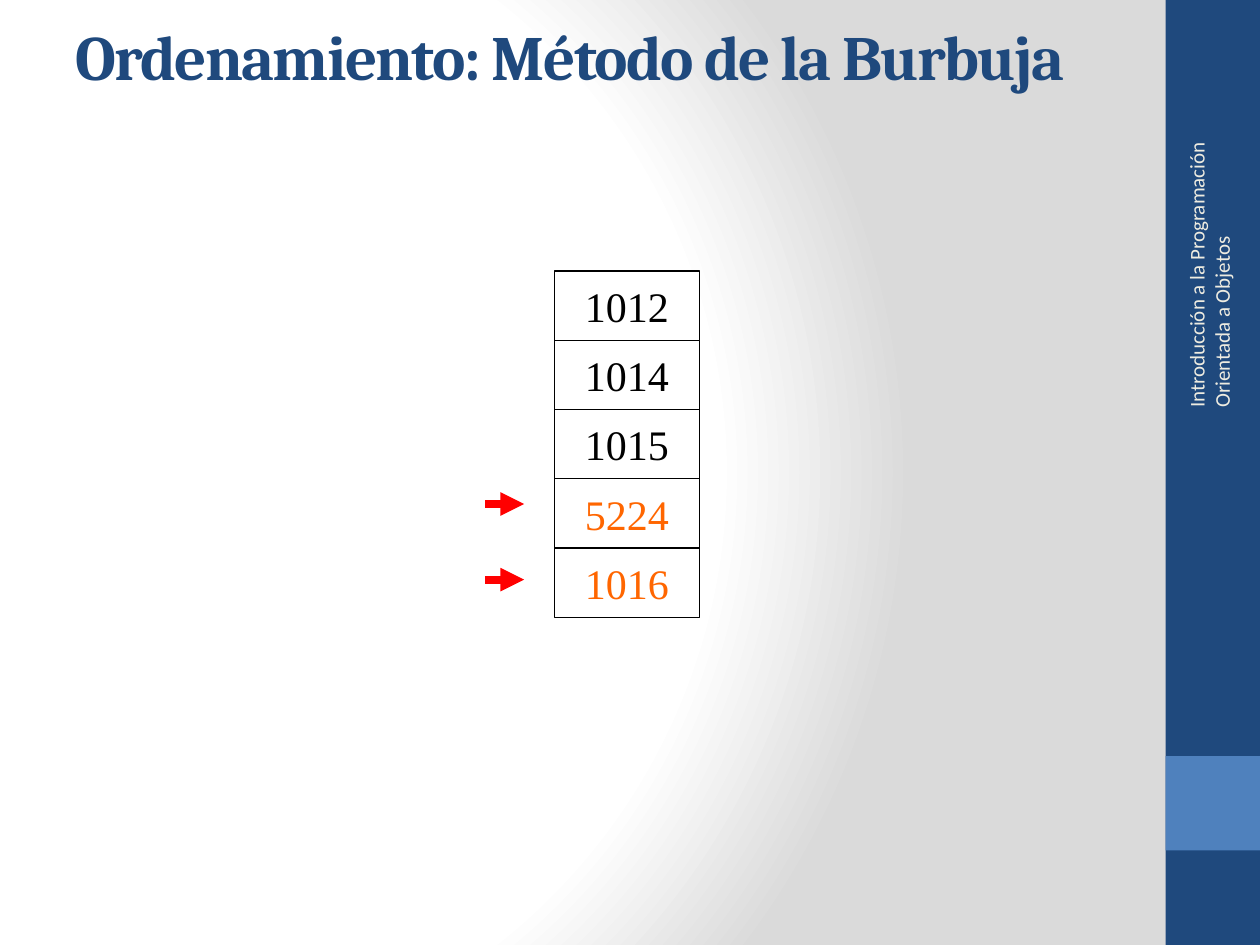
from dataclasses import dataclass
from pptx import Presentation
from pptx.dml.color import RGBColor
from pptx.enum.shapes import MSO_CONNECTOR, MSO_SHAPE
from pptx.enum.text import MSO_ANCHOR, MSO_AUTO_SIZE, PP_ALIGN
from pptx.oxml import parse_xml
from pptx.oxml.ns import nsdecls
from pptx.util import Pt

SCALE = 9144


@dataclass(frozen=True)
class Theme:
    """Colours, fonts and type sizes of the slide."""
    navy: str = "1F497D"
    blue: str = "4F81BD"
    cream: str = "EEECE1"
    white: str = "FFFFFF"
    gray: str = "DADADA"
    black: str = "000000"
    hot: str = "FF6600"
    red: str = "FF0000"
    head: tuple = ("Cambria", 36)
    side: tuple = ("Calibri", 12)
    cell: tuple = ("Times New Roman", 24)


THEME = Theme()


def emu(*vals):
    """Turn px into EMU."""
    return [round(val * SCALE) for val in vals]


def assign(obj, vals):
    """Set each attribute of obj from a dict."""
    for key, val in vals.items():
        setattr(obj, key, val)


def write(shape, text, face, tint, align=PP_ALIGN.LEFT, bold=False, **frame):
    """Put one styled line of text in a shape and return its run."""
    assign(shape.text_frame, {"auto_size": MSO_AUTO_SIZE.NONE,
                              "word_wrap": True, **frame})
    para = shape.text_frame.paragraphs[0]
    para.alignment = align
    run = para.add_run()
    run.text = text
    name, size = face
    assign(run.font, {"name": name, "size": Pt(size), "bold": bold})
    run.font.color.rgb = RGBColor.from_string(tint)
    return run


def block(slide, box, fill, edge=None):
    """Draw a flat rectangle."""
    shape = slide.shapes.add_shape(MSO_SHAPE.RECTANGLE, *emu(*box))
    shape.shadow.inherit = False
    shape.fill.solid()
    shape.fill.fore_color.rgb = RGBColor.from_string(fill)
    if edge:
        shape.line.color.rgb = RGBColor.from_string(edge)
        shape.line.width = Pt(0.75)
    else:
        shape.line.fill.background()
    return shape


def arrow(slide, left, top, size):
    """Draw a red arrow that points right."""
    line = slide.shapes.add_connector(
        MSO_CONNECTOR.STRAIGHT, *emu(left, top, left + size, top))
    line.line.color.rgb = RGBColor.from_string(THEME.red)
    line.line.width = Pt(4.5)
    line.line._get_or_add_ln().append(
        parse_xml(f'<a:tailEnd {nsdecls("a")} type="triangle"/>'))
    line._element.spPr.append(parse_xml(f'<a:effectLst {nsdecls("a")}/>'))


def backdrop(slide):
    """Fill the background with a round white to gray gradient."""
    slide.background.fill.solid()
    stops = "".join(
        f'<a:gs pos="{pos}000"><a:srgbClr val="{tint}"/></a:gs>'
        for pos, tint in ((0, THEME.white), (75, THEME.white), (100, THEME.gray)))
    fill = parse_xml(
        f'<a:gradFill {nsdecls("a")} rotWithShape="1"><a:gsLst>{stops}</a:gsLst>'
        '<a:path path="circle"><a:fillToRect l="20000" t="50000" r="100000"'
        ' b="50000"/></a:path></a:gradFill>')
    base = slide._element.xpath(".//p:bgPr")[0]
    base.replace(base[0], fill)


def sidebar(slide, box):
    """Draw the side band with its square and upright course name."""
    left, top, wide, high = box
    block(slide, box, THEME.navy)
    block(slide, (left, top + high - 2 * wide, wide, wide), THEME.blue)
    label = slide.shapes.add_textbox(*emu(left - 99, top + 180, 267, 40))
    label.rotation = 270
    write(label, "Introducción a la Programación Orientada a Objetos",
          THEME.side, THEME.cream, vertical_anchor=MSO_ANCHOR.MIDDLE)


def heading(slide, box, text):
    """Place and style the title."""
    title = slide.shapes.title
    assign(title, dict(zip(("left", "top", "width", "height"), emu(*box))))
    run = write(title, text, THEME.head, THEME.navy, bold=True,
                vertical_anchor=MSO_ANCHOR.TOP)
    run.font._element.set("spc", "-100")


def stack(slide, box, items, marked):
    """Stack the values and point at the marked pair."""
    left, top, wide, high = box
    step = high // len(items)
    for row, item in enumerate(items):
        cell = block(slide, (left, top + row * step, wide, step),
                     THEME.white, THEME.black)
        write(cell, item, THEME.cell, THEME.hot if row in marked else THEME.black,
              PP_ALIGN.CENTER, word_wrap=False, vertical_anchor=MSO_ANCHOR.MIDDLE)
    for turn in range(len(marked)):
        arrow(slide, left - 55, top + 185 + turn * 60, 31)


def main():
    """Build and save the slide."""
    deck = Presentation()
    deck.slide_width, deck.slide_height = emu(1000, 750)
    slide = deck.slides.add_slide(deck.slide_layouts[5])
    backdrop(slide)
    sidebar(slide, (925, 0, 75, 750))
    heading(slide, (50, 9, 898, 66), "Ordenamiento: Método de la Burbuja")
    stack(slide, (440, 215, 115, 275),
          ("1012", "1014", "1015", "5224", "1016"), (3, 4))
    deck.save("out.pptx")


if __name__ == "__main__":
    main()
